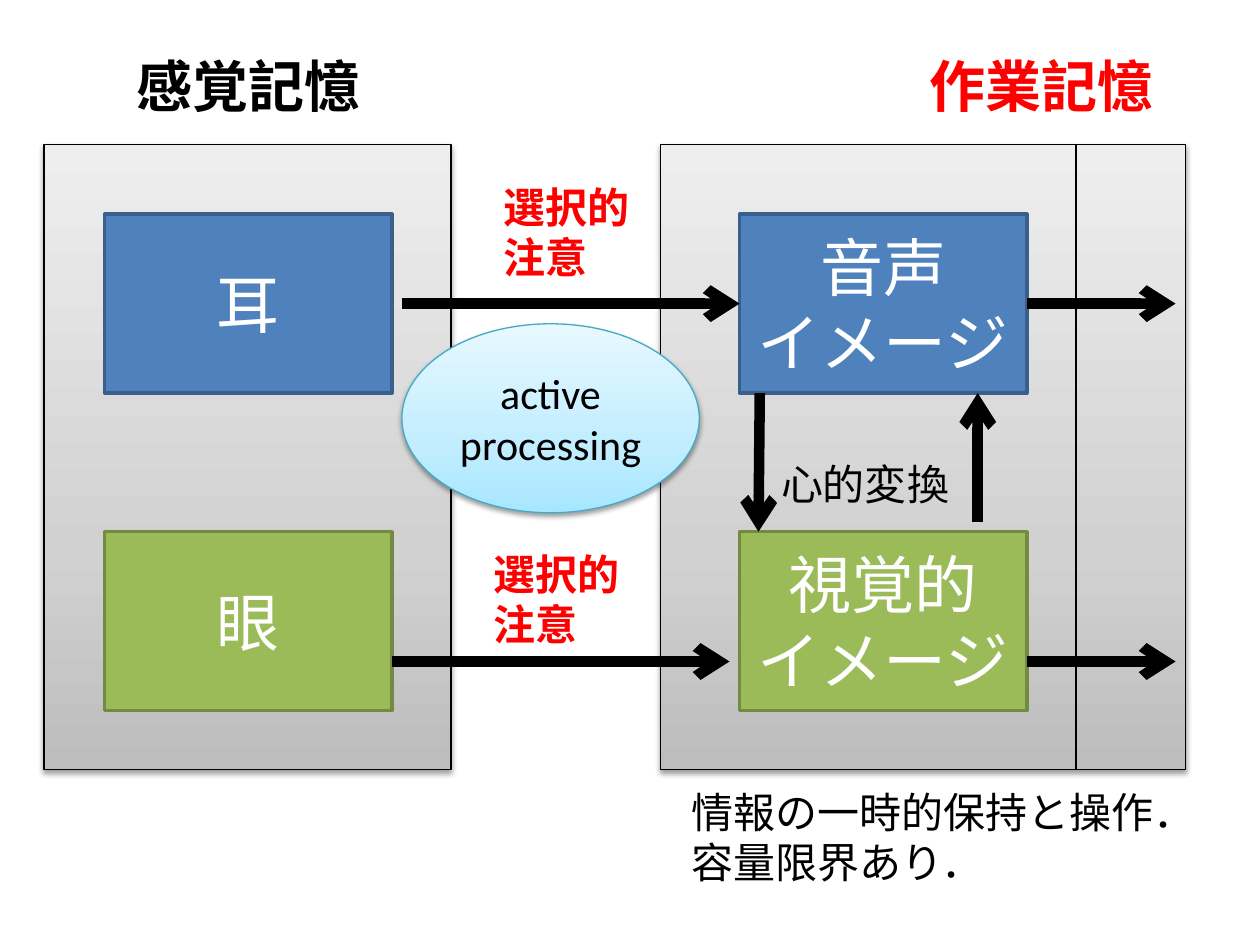
from copy import deepcopy
from dataclasses import dataclass

from lxml import etree
from pptx import Presentation
from pptx.dml.color import RGBColor
from pptx.enum.shapes import MSO_CONNECTOR, MSO_SHAPE
from pptx.enum.text import MSO_ANCHOR, MSO_AUTO_SIZE, PP_ALIGN
from pptx.oxml import parse_xml
from pptx.oxml.ns import nsdecls, qn
from pptx.util import Inches, Pt

RECT, OVAL = MSO_SHAPE.RECTANGLE, MSO_SHAPE.OVAL
STRAIGHT = MSO_CONNECTOR.STRAIGHT
LEFT, CENTER = PP_ALIGN.LEFT, PP_ALIGN.CENTER
TOP, MIDDLE = MSO_ANCHOR.TOP, MSO_ANCHOR.MIDDLE
NO_FIT = MSO_AUTO_SIZE.NONE
SIDE_LEFT, SIDE_RIGHT = 1, 3

SLIDE_W, SLIDE_H = Inches(10), Inches(7.5)
COLS, ROWS = 100, 75


@dataclass(frozen=True)
class Theme:
    font: str = "Calibri"
    black: str = "000000"
    white: str = "FFFFFF"
    red: str = "FF0000"
    sound: tuple = ("4F81BD", "3A5F8C")
    sight: tuple = ("9BBB59", "738A42")
    grey: tuple = ("BDBDBD", "D1D1D1", "EEEEEE")
    aqua: tuple = ("A7E6FF", "C1EDFF", "E7F8FF")
    aqua_line: str = "46AAC5"
    stops: tuple = (0, 0.35, 1)
    heading: int = 32
    box: int = 36
    body: int = 24
    thin: float = 0.75
    border: float = 2
    arrow: float = 6


T = Theme()


@dataclass(frozen=True)
class Area:
    x: float
    y: float
    w: float
    h: float

    def emu(self) -> tuple:
        return col(self.x), row(self.y), col(self.w), row(self.h)


@dataclass(frozen=True)
class Style:
    size: int
    color: str
    bold: bool = False
    align: int = LEFT
    anchor: int = TOP


@dataclass(frozen=True)
class Box:
    area: Area
    lines: tuple
    colors: tuple


@dataclass(frozen=True)
class Label:
    area: Area
    lines: tuple
    style: Style


@dataclass(frozen=True)
class Line:
    x1: float
    y1: float
    x2: float
    y2: float
    begin: str = ""
    end: str = ""


def col(n: float) -> int:
    return round(SLIDE_W * n / COLS)


def row(n: float) -> int:
    return round(SLIDE_H * n / ROWS)


def rgb(color: str) -> RGBColor:
    return RGBColor.from_string(color)


def write(sp, lines: tuple, style: Style, wrap: bool = False) -> None:
    tf = sp.text_frame
    tf.word_wrap = wrap
    tf.auto_size = NO_FIT
    tf.vertical_anchor = style.anchor
    for i, line in enumerate(lines):
        p = tf.add_paragraph() if i else tf.paragraphs[0]
        p.alignment = style.align
        r = p.add_run()
        r.text = line
        r.font.name, r.font.size = T.font, Pt(style.size)
        r.font.bold = style.bold
        r.font.color.rgb = rgb(style.color)


def add_outlined(shapes, kind: int, area: Area, color: str, width: float):
    sp = shapes.add_shape(kind, *area.emu())
    sp.shadow.inherit = False
    sp.line.color.rgb = rgb(color)
    sp.line.width = Pt(width)
    return sp


def add_gradient(shapes, kind: int, area: Area, colors: tuple, line: str):
    sp = add_outlined(shapes, kind, area, line, T.thin)
    sp.fill.gradient()
    sp.fill.gradient_angle = 90
    gs = sp._element.spPr.find(".//" + qn("a:gs"))
    gs.addnext(deepcopy(gs))
    for stop, color, position in zip(sp.fill.gradient_stops, colors, T.stops):
        stop.color.rgb = rgb(color)
        stop.position = position
    effects = sp._element.spPr.find(qn("a:effectLst"))
    effects.append(parse_xml(
        f'<a:outerShdw {nsdecls("a")} blurRad="{Pt(3.1)}" dist="{Pt(1.6)}" dir="5400000" rotWithShape="0">'
        f'<a:srgbClr val="{T.black}"><a:alpha val="38000"/></a:srgbClr></a:outerShdw>'))
    return sp


def add_box(shapes, box: Box):
    fill, line = box.colors
    sp = add_outlined(shapes, RECT, box.area, line, T.border)
    sp.fill.solid()
    sp.fill.fore_color.rgb = rgb(fill)
    write(sp, box.lines, Style(T.box, T.white, align=CENTER, anchor=MIDDLE), wrap=True)
    return sp


def add_label(shapes, label: Label) -> None:
    write(shapes.add_textbox(*label.area.emu()), label.lines, label.style)


def add_line(shapes, line: Line, width: float, boxes: dict, head: bool = True) -> None:
    cx = shapes.add_connector(STRAIGHT, col(line.x1), row(line.y1), col(line.x2), row(line.y2))
    cx.line.color.rgb = rgb(T.black)
    cx.line.width = Pt(width)
    if head:
        etree.SubElement(cx.line._get_or_add_ln(), qn("a:tailEnd"), type="arrow")
    etree.SubElement(cx._element.spPr, qn("a:effectLst"))
    if line.begin:
        cx.begin_connect(boxes[line.begin], SIDE_RIGHT)
    if line.end:
        cx.end_connect(boxes[line.end], SIDE_LEFT)


PANEL_Y, PANEL_H = 11.5, 49.6
BOX_W, BOX_H = 22.8, 14.2
SENSE_X, WORK_X = 8.3, 58.7
SOUND_Y, SIGHT_Y = 17, 42.2
SOUND_MID, SIGHT_ARROW = SOUND_Y + BOX_H / 2, 52.5
SENSE_R, WORK_R = SENSE_X + BOX_W, WORK_X + BOX_W
OUT_X, DIVIDER_X = 93.3, 85.4

PANELS = (Area(3.5, PANEL_Y, 32.3, PANEL_H), Area(52.4, PANEL_Y, 41.7, PANEL_H))
BOXES = {
    "ear": Box(Area(SENSE_X, SOUND_Y, BOX_W, BOX_H), ("耳",), T.sound),
    "eye": Box(Area(SENSE_X, SIGHT_Y, BOX_W, BOX_H), ("眼",), T.sight),
    "audio": Box(Area(WORK_X, SOUND_Y, BOX_W, BOX_H), ("音声", "イメージ"), T.sound),
    "visual": Box(Area(WORK_X, SIGHT_Y, BOX_W, BOX_H), ("視覚的", "イメージ"), T.sight),
}
DIVIDER = Line(DIVIDER_X, PANEL_Y, DIVIDER_X, PANEL_Y + PANEL_H)
ARROWS = (
    Line(31.9, SOUND_MID, WORK_X, SOUND_MID, end="audio"),
    Line(SENSE_R, SIGHT_ARROW, 57.9, SIGHT_ARROW),
    Line(WORK_R, SOUND_MID, OUT_X, SOUND_MID, begin="audio"),
    Line(WORK_R, SIGHT_ARROW, OUT_X, SIGHT_ARROW),
    Line(60.3, SOUND_Y + BOX_H, 60.2, SIGHT_Y),
    Line(77.6, 41.4, 77.6, SOUND_Y + BOX_H),
)
SENSE_TITLE = Label(Area(9.8, 3.6, 20, 6.4), ("感覚記憶",), Style(T.heading, T.black, True))
PLAIN, ATTENTION = Style(T.body, T.black), Style(T.body, T.red, True)
SELECTIVE = ("選択的", "注意")
LABELS = (
    Label(Area(72.8, 3.6, 20, 6.4), ("作業記憶",), Style(T.heading, T.red, True)),
    Label(Area(53.9, 61.9, 40.5, 9.1), ("情報の一時的保持と操作．", "容量限界あり．"), PLAIN),
    Label(Area(61, 35.9, 15.5, 5), ("心的変換",), PLAIN),
    Label(Area(39, 13.9, 12.1, 9.1), SELECTIVE, ATTENTION),
    Label(Area(38.2, 43, 12.1, 9.1), SELECTIVE, ATTENTION),
)
PROCESSING = Area(31.9, 25.7, 23.6, 15)


def main() -> None:
    prs = Presentation()
    prs.slide_width, prs.slide_height = SLIDE_W, SLIDE_H
    s = prs.slides.add_slide(prs.slide_layouts[5])
    shapes = s.shapes
    title = shapes.title
    title.left, title.top, title.width, title.height = SENSE_TITLE.area.emu()
    write(title, SENSE_TITLE.lines, SENSE_TITLE.style)
    for area in PANELS:
        add_gradient(shapes, RECT, area, T.grey, T.black)
    boxes = {name: add_box(shapes, box) for name, box in BOXES.items()}
    add_line(shapes, DIVIDER, T.thin, boxes, head=False)
    for arrow in ARROWS:
        add_line(shapes, arrow, T.arrow, boxes)
    for label in LABELS:
        add_label(shapes, label)
    oval = add_gradient(shapes, OVAL, PROCESSING, T.aqua, T.aqua_line)
    write(oval, ("active", "processing"), Style(T.body, T.black, align=CENTER, anchor=MIDDLE), wrap=True)
    prs.save("out.pptx")


if __name__ == "__main__":
    main()
